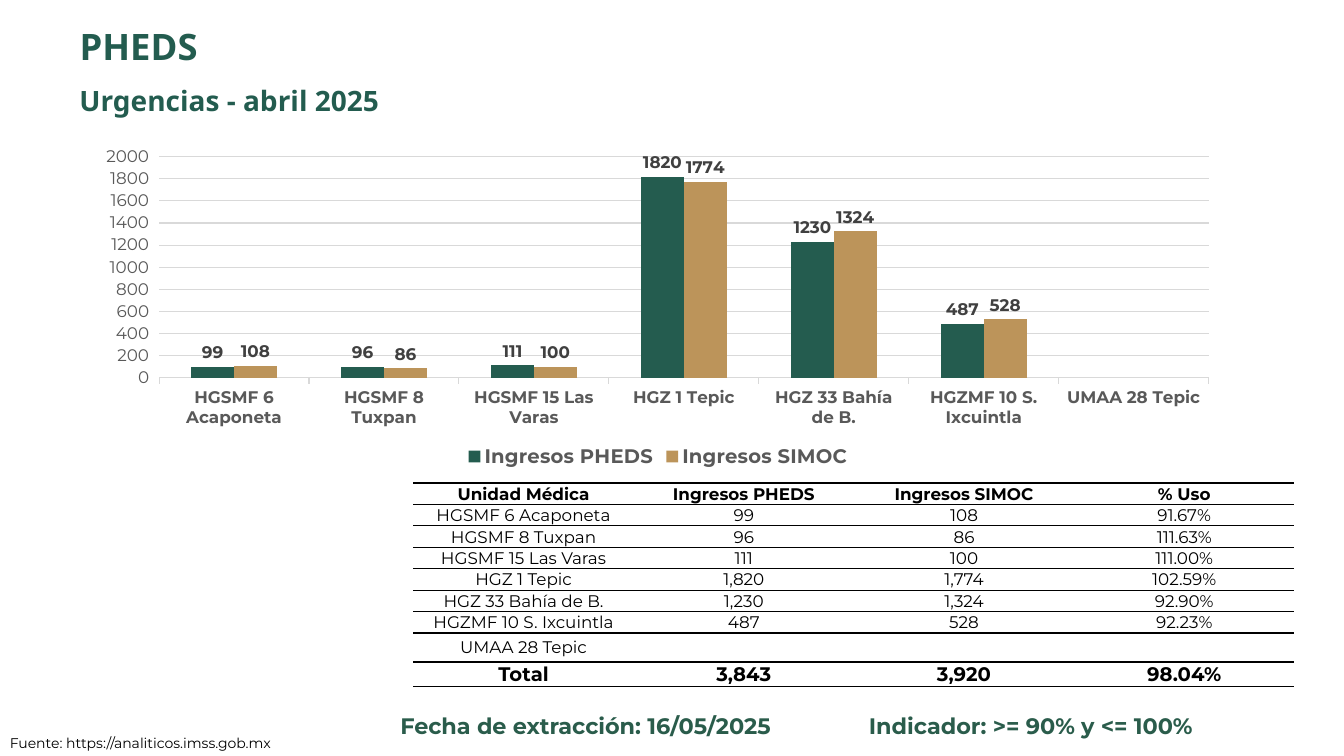
"""Build the PHEDS emergency admissions slide with its chart and table."""
from lxml import etree
from pptx import Presentation
from pptx import util as u
from pptx.chart.data import CategoryChartData
from pptx.dml.color import RGBColor
from pptx.enum import chart as charts, text
from pptx.oxml import ns

GREEN = RGBColor(0x23, 0x5C, 0x4F)
FOOTER_GREEN = RGBColor(0x2A, 0x5C, 0x4B)
BAR_GREEN = RGBColor(0x24, 0x5C, 0x4F)
GOLD = RGBColor(0xBC, 0x94, 0x5A)
BLACK = RGBColor(0, 0, 0)
LABEL_GRAY = RGBColor(0x40, 0x40, 0x40)
AXIS_GRAY = RGBColor(0x59, 0x59, 0x59)
GRID_GRAY = RGBColor(0xD9, 0xD9, 0xD9)
BODY_FONT = "Montserrat"
HEADING_FONT = "Noto Sans"


def style_font(font, size, color=BLACK, bold=False, name=BODY_FONT):
    font.name, font.size, font.bold = name, u.Pt(size), bold
    font.color.rgb = color


def write(frame, content, size, color=BLACK, bold=False, name=BODY_FONT,
          align=text.PP_ALIGN.CENTER, spacing=None, wrap=True):
    frame.word_wrap = wrap
    paragraph = frame.paragraphs[0]
    paragraph.alignment = align
    paragraph.line_spacing = spacing
    run = paragraph.add_run()
    run.text = content
    style_font(run.font, size, color, bold, name)


presentation = Presentation()
presentation.slide_width, presentation.slide_height = u.Cm(33.87), u.Cm(19.05)
slide = presentation.slides.add_slide(presentation.slide_layouts[5])

title = slide.shapes.title
subtitle = slide.shapes.add_textbox(0, 0, 0, 0)
for shape, top, content, size in [(title, 0.61, "PHEDS", 26),
                                  (subtitle, 2.08, "Urgencias - abril 2025", 20)]:
    shape.left, shape.top = u.Cm(1.75), u.Cm(top)
    shape.width, shape.height = u.Cm(24.08), u.Cm(1.24)
    shape.text_frame.auto_size = text.MSO_AUTO_SIZE.NONE
    shape.text_frame.vertical_anchor = text.MSO_ANCHOR.TOP
    write(shape.text_frame, content, size, color=GREEN, bold=True,
          name=HEADING_FONT, align=text.PP_ALIGN.LEFT, spacing=0.9)

units = [
    ("HGSMF 6 Acaponeta", 99, 108, "91.67%"),
    ("HGSMF 8 Tuxpan", 96, 86, "111.63%"),
    ("HGSMF 15 Las Varas", 111, 100, "111.00%"),
    ("HGZ 1 Tepic", 1820, 1774, "102.59%"),
    ("HGZ 33 Bahía de B.", 1230, 1324, "92.90%"),
    ("HGZMF 10 S. Ixcuintla", 487, 528, "92.23%"),
    ("UMAA 28 Tepic", None, None, ""),
]
headers = ("Unidad Médica", "Ingresos PHEDS", "Ingresos SIMOC", "% Uso")
names, pheds, simoc, usage = zip(*units)

chart_data = CategoryChartData()
chart_data.categories = names
chart_data.add_series(headers[1], pheds)
chart_data.add_series(headers[2], simoc)
chart = slide.shapes.add_chart(
    charts.XL_CHART_TYPE.COLUMN_CLUSTERED,
    u.Cm(2.13), u.Cm(3.53), u.Cm(28.91), u.Cm(8.38), chart_data).chart
style_font(chart.font, 10)
chart.has_title = False
chart.has_legend = True
chart.legend.position = charts.XL_LEGEND_POSITION.BOTTOM
chart.legend.include_in_layout = False
style_font(chart.legend.font, 14, AXIS_GRAY, bold=True)

category_axis, value_axis = chart.category_axis, chart.value_axis
style_font(category_axis.tick_labels.font, 12, AXIS_GRAY, bold=True)
style_font(value_axis.tick_labels.font, 12, AXIS_GRAY)
value_axis.minimum_scale, value_axis.maximum_scale = 0, 2000
value_axis.major_unit = 200
value_axis.format.line.fill.background()
value_axis.has_major_gridlines = True
for line in (category_axis.format.line, value_axis.major_gridlines.format.line):
    line.color.rgb, line.width = GRID_GRAY, u.Pt(0.75)

plot = chart.plots[0]
plot.gap_width, plot.overlap, plot.vary_by_categories = 150, 0, False
for series, color in zip(plot.series, (BAR_GREEN, GOLD)):
    series.format.fill.solid()
    series.format.fill.fore_color.rgb = color
    labels = series.data_labels
    labels.show_value = True
    labels.position = charts.XL_LABEL_POSITION.OUTSIDE_END
    style_font(labels.font, 12, LABEL_GRAY, bold=True)

plot_area = chart.element.find(".//" + ns.qn("c:plotArea"))
for layout in plot_area.findall(ns.qn("c:layout")):
    plot_area.remove(layout)
layout = etree.Element(ns.qn("c:layout"))
plot_area.insert(0, layout)
manual = etree.SubElement(layout, ns.qn("c:manualLayout"))
for tag, value in [("layoutTarget", "inner"), ("xMode", "edge"), ("yMode", "edge"),
                   ("x", "0.065"), ("y", "0.05"), ("w", "0.915"), ("h", "0.665")]:
    etree.SubElement(manual, ns.qn("c:" + tag), val=value)

rows = [headers]
for name, first, second, percent in units:
    rows.append((name, *("" if count is None else f"{count:,}" for count in (first, second)),
                 percent))
rows.append(("Total", "3,843", "3,920", "98.04%"))
table = slide.shapes.add_table(len(rows), len(headers), u.Cm(10.42), u.Cm(12.17),
                               u.Cm(22.2), u.Cm(4.9)).table
table.first_row = table.horz_banding = False
for row_index, row in enumerate(rows):
    is_total = row_index == len(rows) - 1
    table.rows[row_index].height = u.Cm(0.61 if is_total else 0.54)
    for column_index, content in enumerate(row):
        cell = table.cell(row_index, column_index)
        cell.margin_left = cell.margin_top = cell.margin_right = u.Cm(0.02)
        cell.margin_bottom = 0
        cell.vertical_anchor = text.MSO_ANCHOR.MIDDLE
        write(cell.text_frame, content, 14 if is_total else 12,
              bold=is_total or row_index == 0)
        properties = cell._tc.get_or_add_tcPr()
        for side in ("lnL", "lnR"):
            border = etree.SubElement(properties, ns.qn("a:" + side))
            etree.SubElement(border, ns.qn("a:noFill"))
        for side in ("lnT", "lnB"):
            border = etree.SubElement(properties, ns.qn("a:" + side), w=str(u.Pt(1)))
            fill = etree.SubElement(border, ns.qn("a:solidFill"))
            etree.SubElement(fill, ns.qn("a:srgbClr"), val=str(BLACK))
        cell.fill.background()

source = slide.shapes.add_textbox(0, u.Cm(18.39), u.Cm(7.42), u.Cm(0.69))
write(source.text_frame, "Fuente: https://analiticos.imss.gob.mx", 10,
      align=text.PP_ALIGN.LEFT, wrap=False)
for left, width, content in [(8.36, 12.8, "Fecha de extracción: 16/05/2025"),
                             (18.64, 14.68, "Indicador: >= 90% y <= 100%")]:
    footer = slide.shapes.add_textbox(u.Cm(left), u.Cm(17.81), u.Cm(width), u.Cm(0.94))
    write(footer.text_frame, content, 16, color=FOOTER_GREEN, bold=True)

presentation.save("out.pptx")
